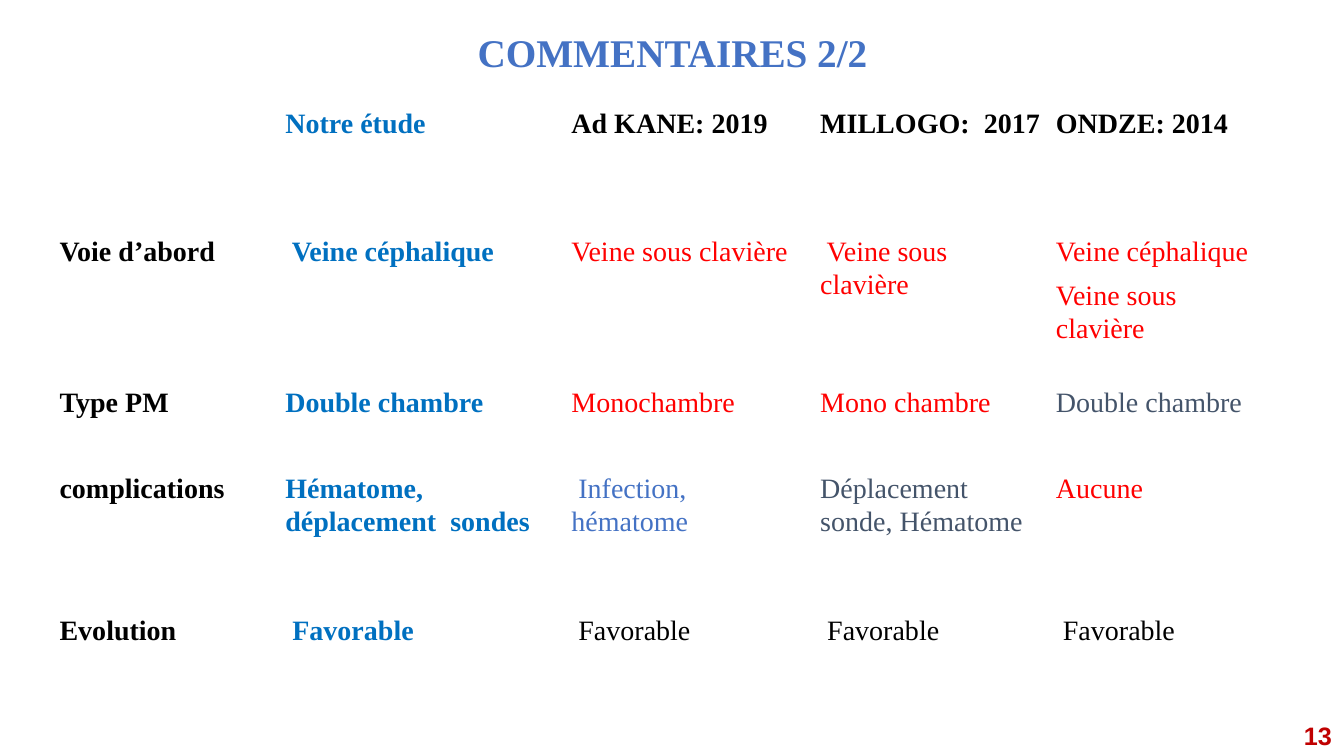
from dataclasses import dataclass

from lxml.etree import SubElement
from pptx import Presentation
from pptx.dml.color import RGBColor
from pptx.enum.text import MSO_ANCHOR, PP_ALIGN
from pptx.oxml.ns import qn
from pptx.util import Cm, Pt


@dataclass(frozen=True)
class Theme:
    black: str = "000000"
    white: str = "FFFFFF"
    blue: str = "4472C4"
    study_blue: str = "0070C0"
    red: str = "FF0000"
    slate: str = "44546A"
    dark_red: str = "C00000"
    serif: str = "Times New Roman"
    sans: str = "Arial"
    title_size: int = 28
    table_size: int = 20
    number_size: int = 18
    thin_border: float = 0.96
    thick_border: float = 3


THEME = Theme()

COLUMN_WIDTHS = (5.69, 7.21, 6.27, 5.94, 5.74)
ROW_HEIGHTS = (3.23, 3.81, 2.16, 3.58, 3.23)

HEADERS = ("", "Notre étude", "Ad KANE: 2019", "MILLOGO:  2017", "ONDZE: 2014")
COMPARISONS = (
    ("Voie d’abord", " Veine céphalique", "Veine sous clavière",
     " Veine sous clavière", "Veine céphalique\nVeine sous clavière"),
    ("Type PM", "Double chambre", "Monochambre", "Mono chambre", "Double chambre"),
    ("complications", "Hématome, déplacement  sondes", " Infection, hématome",
     "Déplacement sonde, Hématome", "Aucune"),
    ("Evolution", " Favorable", " Favorable", " Favorable", " Favorable"),
)
# Colours of the three published studies, one row per comparison
STUDY_COLORS = (
    (THEME.red, THEME.red, THEME.red),
    (THEME.red, THEME.red, THEME.slate),
    (THEME.blue, THEME.slate, THEME.red),
    (THEME.black, THEME.black, THEME.black),
)


def format_runs(paragraph, font_name, size, color, bold):
    for run in paragraph.runs:
        run.font.name = font_name
        run.font.size = Pt(size)
        run.font.bold = bold
        run.font.color.rgb = RGBColor.from_string(color)


def add_label(slide, text, box, font_name, size, color, wrap=True):
    """Add a one-line bold text box and return its text frame."""
    shape = slide.shapes.add_textbox(*(Cm(length) for length in box))
    text_frame = shape.text_frame
    text_frame.word_wrap = wrap
    text_frame.text = text
    format_runs(text_frame.paragraphs[0], font_name, size, color, True)
    return text_frame


def add_title(slide, text):
    text_frame = add_label(slide, text, (2.34, 0.61, 29.21, 1.52),
                           THEME.serif, THEME.title_size, THEME.blue)
    text_frame.vertical_anchor = MSO_ANCHOR.MIDDLE
    text_frame.paragraphs[0].alignment = PP_ALIGN.CENTER
    text_frame.paragraphs[0].line_spacing = 0.9


def set_borders(cell, top, bottom):
    properties = cell._tc.get_or_add_tcPr()
    widths = {"a:lnL": THEME.thin_border, "a:lnR": THEME.thin_border,
              "a:lnT": top, "a:lnB": bottom}
    for tag, width in widths.items():
        line = SubElement(properties, qn(tag), w=str(Pt(width)))
        fill = SubElement(line, qn("a:solidFill"))
        SubElement(fill, qn("a:srgbClr"), val=THEME.white)


def cell_style(row, column):
    """Return the colour and weight of the text in a cell."""
    if column == 1:
        return THEME.study_blue, True
    if row == 0 or column == 0:
        return THEME.black, True
    return STUDY_COLORS[row - 1][column - 2], False


def fill_cell(cell, text, color, bold):
    cell.margin_left = cell.margin_right = Cm(0.18)
    cell.margin_top = cell.margin_bottom = Cm(0.13)
    cell.fill.solid()
    cell.fill.fore_color.rgb = RGBColor.from_string(THEME.white)
    cell.text_frame.text = text
    for paragraph in cell.text_frame.paragraphs:
        paragraph.line_spacing = 1.07
        paragraph.space_after = Pt(8)
        format_runs(paragraph, THEME.serif, THEME.table_size, color, bold)


def add_comparison_table(slide):
    rows = (HEADERS, *COMPARISONS)
    frame = slide.shapes.add_table(
        len(rows), len(HEADERS), Cm(1.32), Cm(2.54),
        Cm(sum(COLUMN_WIDTHS)), Cm(sum(ROW_HEIGHTS)))
    table = frame.table
    for column, width in zip(table.columns, COLUMN_WIDTHS):
        column.width = Cm(width)
    for row, height in zip(table.rows, ROW_HEIGHTS):
        row.height = Cm(height)
    for row_index, texts in enumerate(rows):
        top = THEME.thick_border if row_index == 1 else THEME.thin_border
        bottom = THEME.thick_border if row_index == 0 else THEME.thin_border
        for column_index, text in enumerate(texts):
            cell = table.cell(row_index, column_index)
            set_borders(cell, top, bottom)
            fill_cell(cell, text, *cell_style(row_index, column_index))


def main():
    presentation = Presentation()
    presentation.slide_width = Cm(33.87)
    presentation.slide_height = Cm(19.05)
    slide = presentation.slides.add_slide(presentation.slide_layouts[6])
    add_title(slide, "COMMENTAIRES 2/2")
    add_comparison_table(slide)
    add_label(slide, "13", (32.61, 18.03, 1.22, 1.02),
              THEME.sans, THEME.number_size, THEME.dark_red, wrap=False)
    presentation.save("out.pptx")


if __name__ == "__main__":
    main()
